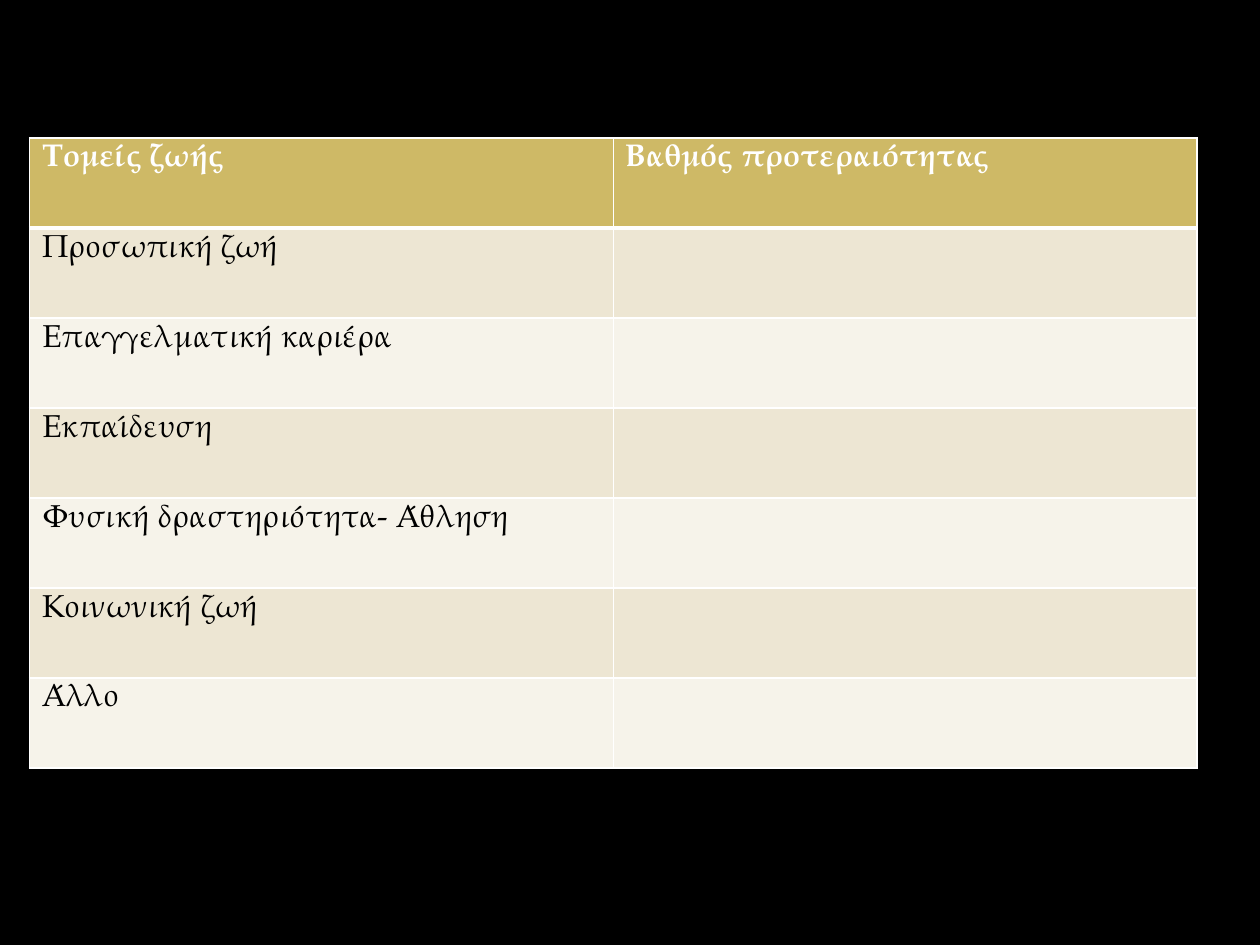
from pptx import Presentation
from pptx.dml.color import RGBColor as RGB
from pptx.oxml import parse_xml
from pptx.oxml.ns import nsdecls
from pptx.util import Pt

FONT = "TeX Gyre Pagella"
COLORS = {
    "back": "000000", "head": "CEB966", "odd": "EDE6D3", "even": "F6F3EA",
    "head_text": "FFFFFF", "text": "000000", "border": "FFFFFF",
}
HEADERS = ["Τομείς ζωής", "Βαθμός προτεραιότητας"]
LIFE_AREAS = [
    "Προσωπική ζωή", "Επαγγελματική καριέρα", "Εκπαίδευση",
    "Φυσική δραστηριότητα- Άθληση", "Κοινωνική ζωή", "Άλλο",
]


def rgb(name):
    """Return the named colour."""
    return RGB.from_string(COLORS[name])


def set_borders(cell, bottom):
    """Draw the four cell borders, with the given bottom width."""
    tcPr = cell._tc.get_or_add_tcPr()
    widths = {"lnL": 1, "lnR": 1, "lnT": 1, "lnB": bottom}
    for i, (tag, width) in enumerate(widths.items()):
        tcPr.insert(i, parse_xml(
            f'<a:{tag} {nsdecls("a")} w="{Pt(width)}"><a:solidFill>'
            f'<a:srgbClr val="{COLORS["border"]}"/></a:solidFill></a:{tag}>'))


def format_cell(cell, text, fill, is_head):
    """Fill a cell, set its borders and add its text."""
    cell.fill.solid()
    cell.fill.fore_color.rgb = rgb(fill)
    cell.margin_top = cell.margin_bottom = Pt(3.6)
    set_borders(cell, 3 if is_head else 1)
    if text:
        r = cell.text_frame.paragraphs[0].add_run()
        r.text = text
        r.font.name = FONT
        r.font.size = Pt(18)
        r.font.bold = is_head
        r.font.color.rgb = rgb("head_text" if is_head else "text")


def add_priority_table(s):
    """Add the table of life areas and their priority."""
    rows = [HEADERS] + [[area, ""] for area in LIFE_AREAS]
    frame = s.shapes.add_table(len(rows), len(HEADERS),
                               Pt(16.9), Pt(78.8), Pt(667.2), Pt(360))
    table = frame.table
    for i, row in enumerate(rows):
        fill = "head" if i == 0 else "odd" if i % 2 else "even"
        for j, text in enumerate(row):
            format_cell(table.cell(i, j), text, fill, i == 0)


def main():
    """Build and save the slide."""
    prs = Presentation()
    prs.slide_width, prs.slide_height = Pt(720), Pt(540)
    s = prs.slides.add_slide(prs.slide_layouts[6])
    s.background.fill.solid()
    s.background.fill.fore_color.rgb = rgb("back")
    add_priority_table(s)
    prs.save("out.pptx")


if __name__ == "__main__":
    main()
